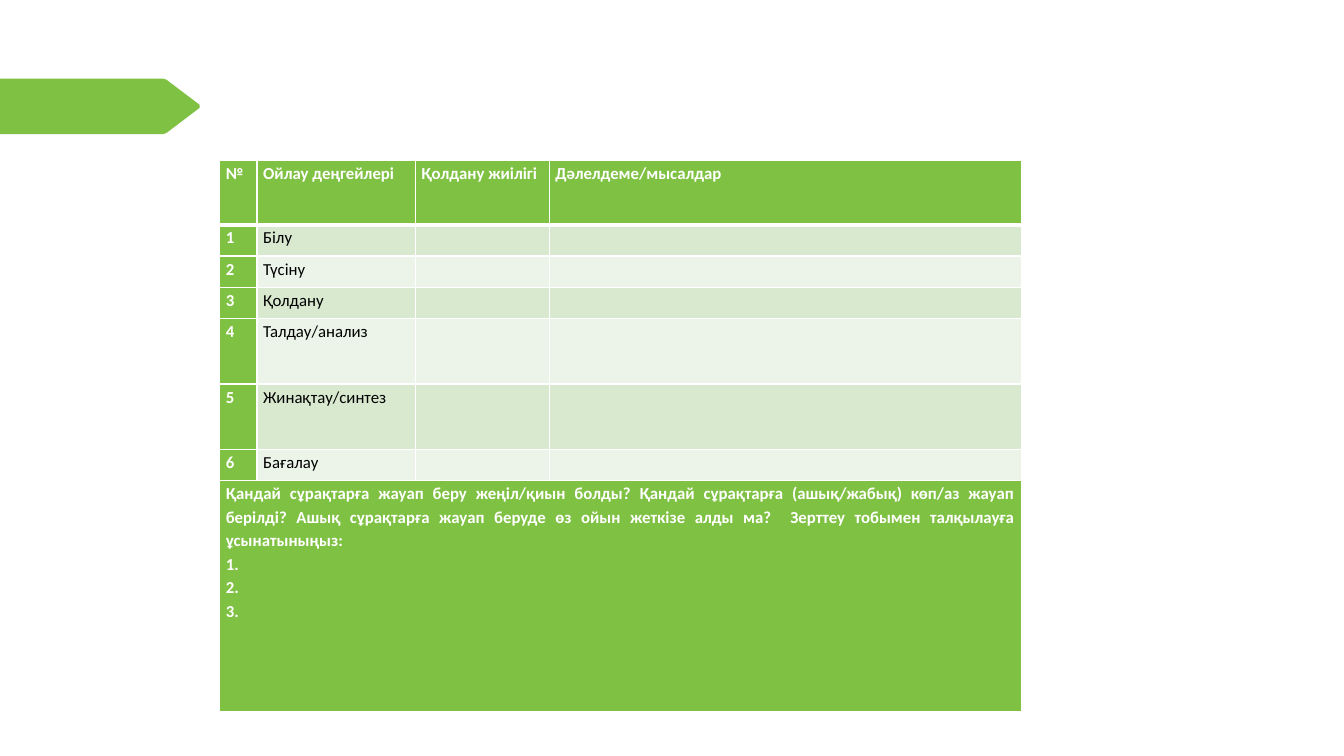
"""Build the slide with the table of thinking levels."""
from dataclasses import dataclass

from lxml.etree import SubElement
from pptx import Presentation
from pptx.dml.color import RGBColor
from pptx.enum.text import PP_ALIGN as Align
from pptx.oxml.ns import qn
from pptx.slide import Slide
from pptx.table import Table, _Cell as Cell
from pptx.util import Inches, Pt

GREEN = RGBColor(0x7F, 0xC1, 0x43)
DARK_BAND = RGBColor(0xD8, 0xE9, 0xCF)
LIGHT_BAND = RGBColor(0xEC, 0xF4, 0xE9)
WHITE = RGBColor(0xFF, 0xFF, 0xFF)
BLACK = RGBColor(0, 0, 0)

COLUMN_WIDTHS = (0.37, 1.57, 1.33, 4.68)
HEADINGS = ("№", "Ойлау деңгейлері", "Қолдану жиілігі", "Дәлелдеме/мысалдар")
HEADER_HEIGHT = 0.64
QUESTIONS_HEIGHT = 2.29
QUESTIONS = "\n".join((
    "Қандай сұрақтарға жауап беру жеңіл/қиын болды? "
    "Қандай сұрақтарға (ашық/жабық) көп/аз жауап берілді? "
    "Ашық сұрақтарға жауап беруде өз ойын жеткізе алды ма?  "
    "Зерттеу тобымен талқылауға ұсынатыныңыз:",
    "1.", "2.", "3.",
))
PENNANT = (
    (0, 0.78), (1.62, 0.78), (1.65, 0.79), (1.98, 1.04), (1.98, 1.07),
    (1.65, 1.32), (1.62, 1.33), (0, 1.33),
)


@dataclass(frozen=True)
class Level:
    name: str
    height: float = 0.31


LEVELS = (
    Level("Білу"),
    Level("Түсіну"),
    Level("Қолдану"),
    Level("Талдау/анализ", 0.65),
    Level("Жинақтау/синтез", 0.65),
    Level("Бағалау"),
)


@dataclass(frozen=True)
class CellStyle:
    fill: RGBColor
    color: RGBColor = BLACK
    bold: bool = False
    top: float = 1
    bottom: float = 1


LABEL = CellStyle(GREEN, WHITE, True)
HEADER = CellStyle(GREEN, WHITE, True, bottom=3)


def add_border(cell: Cell, side: str, width: float) -> None:
    """Give one side of a cell a solid white line."""
    line = SubElement(cell._tc.get_or_add_tcPr(), qn(f"a:ln{side}"), w=str(Pt(width)))
    fill = SubElement(line, qn("a:solidFill"))
    SubElement(fill, qn("a:srgbClr"), val=str(WHITE))


def write_cell(cell: Cell, text: str, style: CellStyle) -> None:
    """Fill a cell with text, borders and colour."""
    cell.text = text
    cell.margin_left = cell.margin_right = Inches(0.06)
    cell.margin_top = cell.margin_bottom = 0
    for side, width in (("L", 1), ("R", 1), ("T", style.top), ("B", style.bottom)):
        add_border(cell, side, width)
    cell.fill.solid()
    cell.fill.fore_color.rgb = style.fill
    for paragraph in cell.text_frame.paragraphs:
        paragraph.alignment = Align.JUSTIFY
        paragraph.line_spacing = 1.15
        paragraph.font.name = "Calibri"
        paragraph.font.size = Pt(12)
        paragraph.font.bold = style.bold
        paragraph.font.color.rgb = style.color


def add_pennant(slide: Slide) -> None:
    """Draw the green pennant at the left edge."""
    start, *corners = [(Inches(x), Inches(y)) for x, y in PENNANT]
    builder = slide.shapes.build_freeform(*start)
    builder.add_line_segments(corners, close=True)
    pennant = builder.convert_to_shape()
    pennant.shadow.inherit = False
    pennant.fill.solid()
    pennant.fill.fore_color.rgb = GREEN
    pennant.line.fill.background()


def add_level_rows(table: Table) -> None:
    """Write the numbered rows in alternating bands."""
    for number, level in enumerate(LEVELS, start=1):
        top = HEADER.bottom if number == 1 else 1
        band = CellStyle(DARK_BAND if number % 2 else LIGHT_BAND, top=top)
        label = CellStyle(GREEN, WHITE, True, top=top)
        for column, text in enumerate((str(number), level.name, "", "")):
            write_cell(table.cell(number, column), text, band if column else label)


def add_levels_table(slide: Slide) -> None:
    """Add the table of thinking levels with the closing questions."""
    heights = (HEADER_HEIGHT, *(level.height for level in LEVELS), QUESTIONS_HEIGHT)
    table = slide.shapes.add_table(
        len(heights), len(COLUMN_WIDTHS), Inches(2.18), Inches(1.59),
        Inches(sum(COLUMN_WIDTHS)), Inches(sum(heights)),
    ).table
    table.first_row = table.horz_banding = False
    for column, width in zip(table.columns, COLUMN_WIDTHS):
        column.width = Inches(width)
    for row, height in zip(table.rows, heights):
        row.height = Inches(height)
    for column, heading in enumerate(HEADINGS):
        write_cell(table.cell(0, column), heading, HEADER)
    add_level_rows(table)
    last_row = len(heights) - 1
    questions = table.cell(last_row, 0)
    questions.merge(table.cell(last_row, len(COLUMN_WIDTHS) - 1))
    write_cell(questions, QUESTIONS, LABEL)


def main() -> None:
    """Assemble and save the slide."""
    deck = Presentation()
    deck.slide_width, deck.slide_height = Inches(13.33), Inches(7.5)
    slide = deck.slides.add_slide(deck.slide_layouts[6])
    add_pennant(slide)
    add_levels_table(slide)
    deck.save("out.pptx")


if __name__ == "__main__":
    main()
